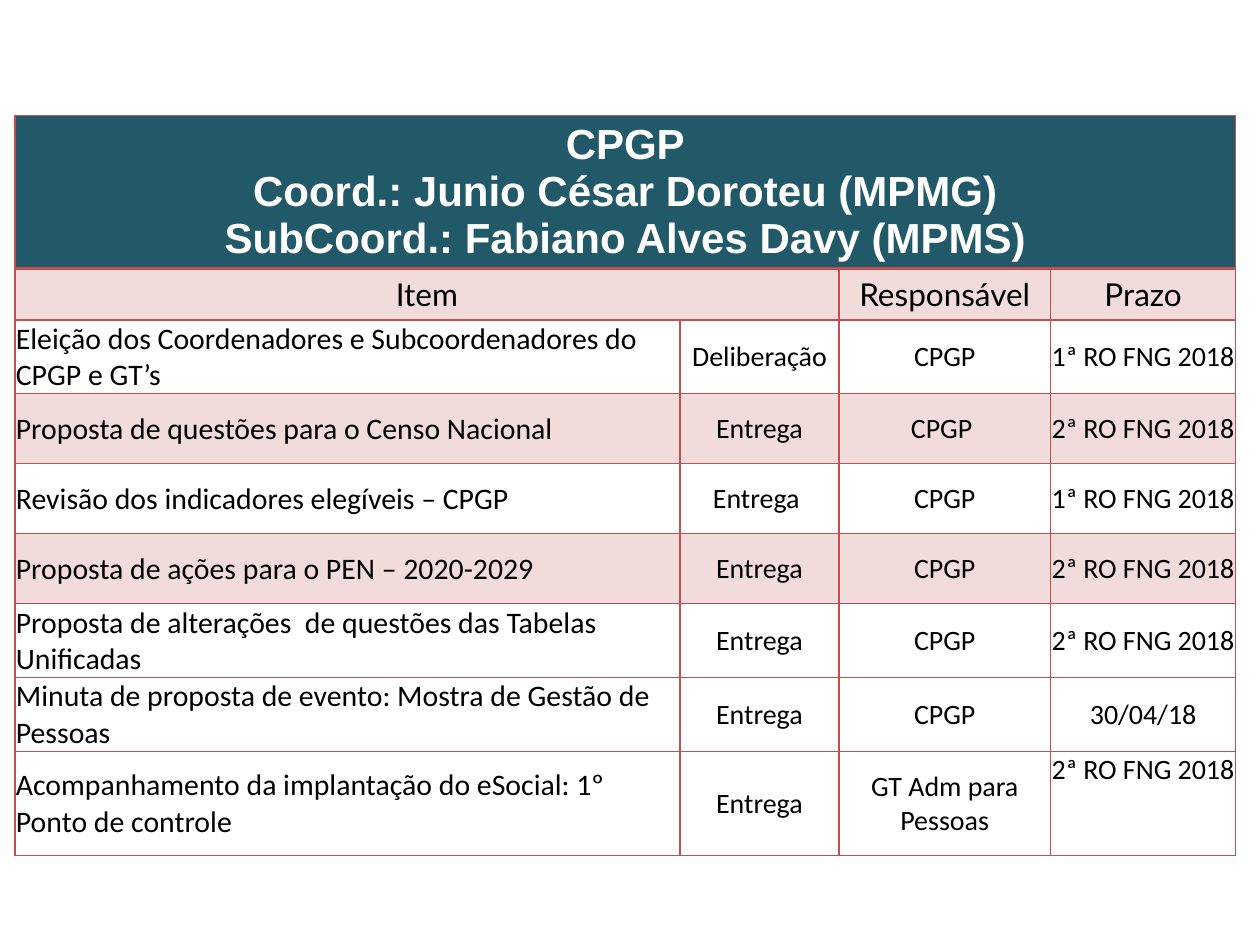
from lxml.etree import SubElement
from pptx import Presentation
from pptx.dml.color import RGBColor
from pptx.enum.text import MSO_ANCHOR, PP_ALIGN
from pptx.oxml import parse_xml
from pptx.oxml.ns import nsdecls, qn
from pptx.util import Cm, Pt

TEAL = RGBColor(0x21, 0x59, 0x68)
RED = RGBColor(0xC0, 0x50, 0x4D)
WHITE = RGBColor(0xFF, 0xFF, 0xFF)
BLACK = RGBColor(0x00, 0x00, 0x00)

COLUMN_WIDTHS = [13.41, 3.2, 4.27, 3.73]
ROW_HEIGHTS = [3.08, 1.03, 1.49, 1.41, 1.41, 1.41, 1.49, 1.49, 2.1]
TINTED_ROWS = {1, 3, 5}

COMMITTEE = [
    "CPGP",
    "Coord.: Junio César Doroteu (MPMG)",
    "SubCoord.: Fabiano Alves Davy (MPMS)",
]
HEADINGS = {0: "Item", 2: "Responsável", 3: "Prazo"}
ITEMS = [
    ("Eleição dos Coordenadores e Subcoordenadores do CPGP e GT’s",
     "Deliberação", "CPGP", "1ª RO FNG 2018"),
    ("Proposta de questões para o Censo Nacional",
     "Entrega", "CPGP ", "2ª RO FNG 2018"),
    ("Revisão dos indicadores elegíveis – CPGP",
     "Entrega ", "CPGP", "1ª RO FNG 2018"),
    ("Proposta de ações para o PEN – 2020-2029",
     "Entrega", "CPGP", "2ª RO FNG 2018"),
    ("Proposta de alterações  de questões das Tabelas  Unificadas",
     "Entrega", "CPGP", "2ª RO FNG 2018"),
    ("Minuta de proposta de evento: Mostra de Gestão de Pessoas",
     "Entrega", "CPGP", "30/04/18"),
    ("Acompanhamento da implantação do eSocial: 1º Ponto de controle",
     "Entrega", "GT Adm para Pessoas", "2ª RO FNG 2018"),
]


def write_cell(cell, lines, font_name, size, color=BLACK, bold=False,
               align=PP_ALIGN.CENTER):
    frame = cell.text_frame
    for number, line in enumerate(lines):
        paragraph = frame.add_paragraph() if number else frame.paragraphs[0]
        paragraph.alignment = align
        run = paragraph.add_run()
        run.text = line
        run.font.name = font_name
        run.font.size = Pt(size)
        run.font.bold = bold
        run.font.color.rgb = color


def fill_cell(cell, color=None, opacity=100):
    if color is None:
        cell.fill.background()
        return
    cell.fill.solid()
    cell.fill.fore_color.rgb = color
    if opacity < 100:
        tint = cell.fill._xPr.find(qn("a:solidFill"))[0]
        SubElement(tint, qn("a:alpha")).set("val", str(opacity * 1000))


def border_cell(cell, bottom=1):
    properties = cell._tc.get_or_add_tcPr()
    sides = {"lnL": 1, "lnR": 1, "lnT": 1, "lnB": bottom}
    for position, (side, width) in enumerate(sides.items()):
        properties.insert(position, parse_xml(
            f'<a:{side} {nsdecls("a")} w="{Pt(width)}"><a:solidFill>'
            f'<a:srgbClr val="{RED}"/></a:solidFill></a:{side}>'))


def add_agenda_table(slide):
    agenda = slide.shapes.add_table(
        len(ROW_HEIGHTS), len(COLUMN_WIDTHS), Cm(0.3), Cm(2.33),
        Cm(sum(COLUMN_WIDTHS)), Cm(sum(ROW_HEIGHTS))).table
    agenda.first_row = False
    agenda.horz_banding = False
    for column, width in zip(agenda.columns, COLUMN_WIDTHS):
        column.width = Cm(width)
    for row_number, (row, height) in enumerate(zip(agenda.rows, ROW_HEIGHTS)):
        row.height = Cm(height)
        for cell in row.cells:
            if row_number == 0:
                fill_cell(cell, TEAL)
            elif row_number in TINTED_ROWS:
                fill_cell(cell, RED, 20)
            else:
                fill_cell(cell)
            border_cell(cell, bottom=1 if row_number else 2)
    agenda.cell(0, 0).merge(agenda.cell(0, 3))
    agenda.cell(1, 0).merge(agenda.cell(1, 1))
    return agenda


def write_item(agenda, row_number, item):
    for column, text in enumerate(item):
        cell = agenda.cell(row_number, column)
        cell.vertical_anchor = MSO_ANCHOR.MIDDLE
        cell.margin_left = cell.margin_right = cell.margin_top = Cm(0.02)
        cell.margin_bottom = Cm(0)
        write_cell(cell, [text], "Calibri", 16 if column else 17,
                   align=PP_ALIGN.CENTER if column else PP_ALIGN.LEFT)


def main():
    presentation = Presentation()
    presentation.slide_width = Cm(25.4)
    presentation.slide_height = Cm(19.05)
    slide = presentation.slides.add_slide(presentation.slide_layouts[6])

    agenda = add_agenda_table(slide)
    write_cell(agenda.cell(0, 0), COMMITTEE, "Arial", 24, WHITE, bold=True)
    for column, heading in HEADINGS.items():
        write_cell(agenda.cell(1, column), [heading], "Lato", 18)
    for row_number, item in enumerate(ITEMS, start=2):
        write_item(agenda, row_number, item)
    agenda.cell(8, 3).vertical_anchor = MSO_ANCHOR.TOP

    presentation.save("out.pptx")


if __name__ == "__main__":
    main()
